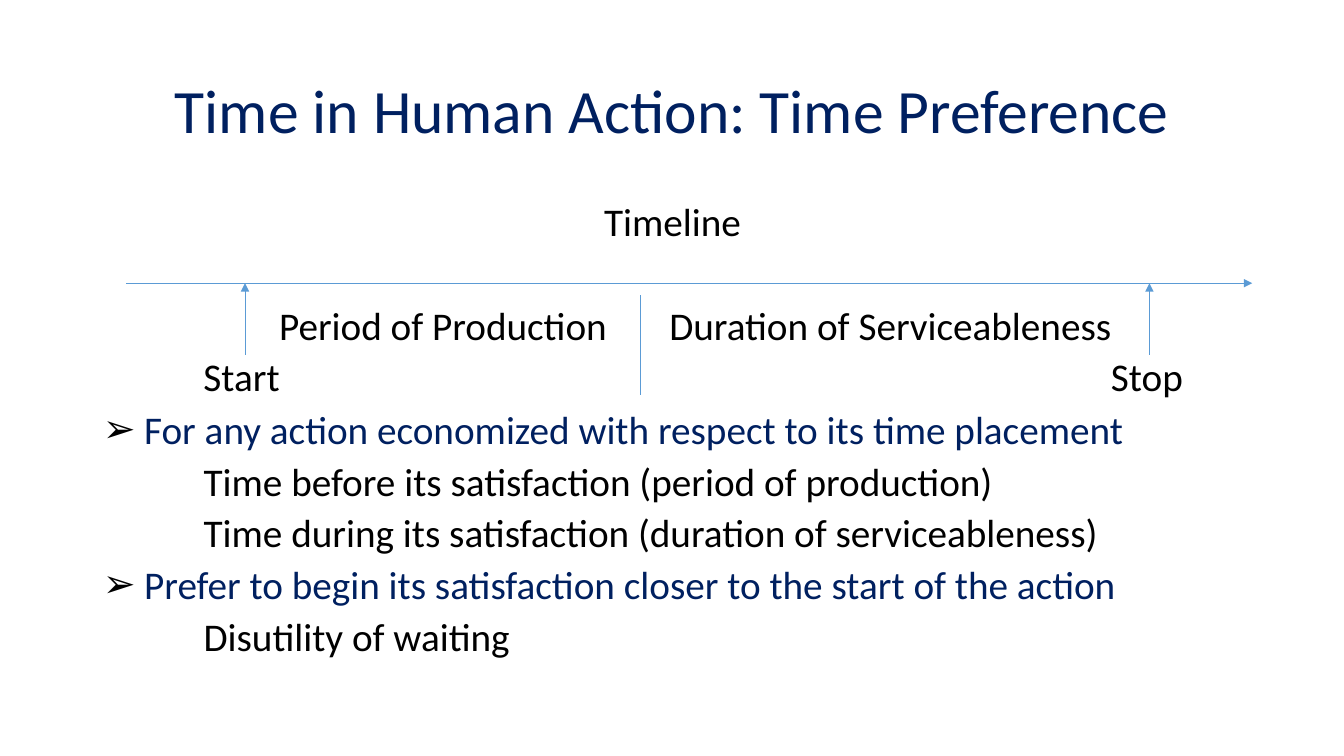
from lxml import etree
from pptx import Presentation
from pptx.dml.color import RGBColor
from pptx.enum.shapes import MSO_CONNECTOR as CONN
from pptx.enum.text import MSO_ANCHOR as ANCHOR, MSO_AUTO_SIZE as FIT, PP_ALIGN as ALIGN
from pptx.oxml.ns import qn
from pptx.util import Inches, Pt

NAVY = RGBColor(0x00, 0x20, 0x60)
BLACK = RGBColor(0x00, 0x00, 0x00)
BLUE = RGBColor(0x5B, 0x9B, 0xD5)

prs = Presentation()
prs.slide_width, prs.slide_height = Inches(13.33), Inches(7.5)
s = prs.slides.add_slide(prs.slide_layouts[1])
title, body = s.shapes.title, s.placeholders[1]


def write(p, text, size, color, align, spacing, before):
    layout = {"alignment": align, "line_spacing": spacing, "space_before": Pt(before), "space_after": Pt(0)}
    for name, value in layout.items():
        setattr(p, name, value)
    r = p.add_run()
    r.text = text
    for name, value in {"name": "Calibri", "size": Pt(size)}.items():
        setattr(r.font, name, value)
    r.font.color.rgb = color


def add_child(parent, tag, **attrs):
    return etree.SubElement(parent, qn(tag), attrs)


for sp, top, height, anchor in [
    (title, 0.4, 1.45, ANCHOR.MIDDLE),
    (body, 2, 4.76, ANCHOR.TOP),
]:
    box = {"left": 0.92, "top": top, "width": 11.5, "height": height}
    for name, value in box.items():
        setattr(sp, name, Inches(value))
    frame = {"word_wrap": True, "auto_size": FIT.NONE, "vertical_anchor": anchor}
    for name, value in frame.items():
        setattr(sp.text_frame, name, value)

write(title.text_frame.paragraphs[0], "Time in Human Action: Time Preference", 44, NAVY, ALIGN.CENTER, 0.9, 0)

tf = body.text_frame
lines = [
    ("Timeline", ALIGN.CENTER, 10, 0, False),
    ("For any action economized with respect to its time placement", ALIGN.LEFT, 121.5, 0.41, True),
    ("Time before its satisfaction (period of production)", ALIGN.LEFT, 10, 1, False),
    ("Time during its satisfaction (duration of serviceableness)", ALIGN.LEFT, 10, 1, False),
    ("Prefer to begin its satisfaction closer to the start of the action", ALIGN.LEFT, 10, 0.41, True),
    ("Disutility of waiting", ALIGN.LEFT, 10, 1, False),
]
for i, (text, align, before, margin, bullet) in enumerate(lines):
    p = tf.add_paragraph() if i else tf.paragraphs[0]
    write(p, text, 28, NAVY if bullet else BLACK, align, 0.8, before)
    pPr = p._p.get_or_add_pPr()
    pPr.set("marL", str(Inches(margin)))
    pPr.set("indent", str(-Inches(margin) if bullet else 0))
    if bullet:
        add_child(add_child(pPr, "a:buClr"), "a:srgbClr", val=str(BLACK))
        add_child(pPr, "a:buFont", typeface="Arial")
        add_child(pPr, "a:buChar", char="➢")
    else:
        add_child(pPr, "a:buNone")

for text, left, top, width in [
    ("Period of Production", 2.67, 3.03, 3.6),
    ("Duration of Serviceableness", 6.54, 3.03, 4.8),
    ("Start", 1.92, 3.54, 1.2),
    ("Stop", 10.92, 3.54, 1.2),
]:
    label = s.shapes.add_textbox(Inches(left), Inches(top), Inches(width), Inches(0.6))
    label.text_frame.word_wrap = True
    write(label.text_frame.paragraphs[0], text, 28, BLACK, ALIGN.LEFT, 0.8, 10)

for x1, y1, x2, y2, arrow in [
    (1.25, 2.81, 12.42, 2.81, True),
    (2.43, 3.52, 2.43, 2.81, True),
    (11.4, 3.52, 11.4, 2.81, True),
    (6.35, 2.93, 6.35, 3.92, False),
]:
    line = s.shapes.add_connector(CONN.STRAIGHT, Inches(x1), Inches(y1), Inches(x2), Inches(y2))
    line.line.color.rgb = BLUE
    line.line.width = Pt(0.5)
    if arrow:
        add_child(line.line._get_or_add_ln(), "a:tailEnd", type="triangle")
    add_child(line._element.spPr, "a:effectLst")

prs.save("out.pptx")
